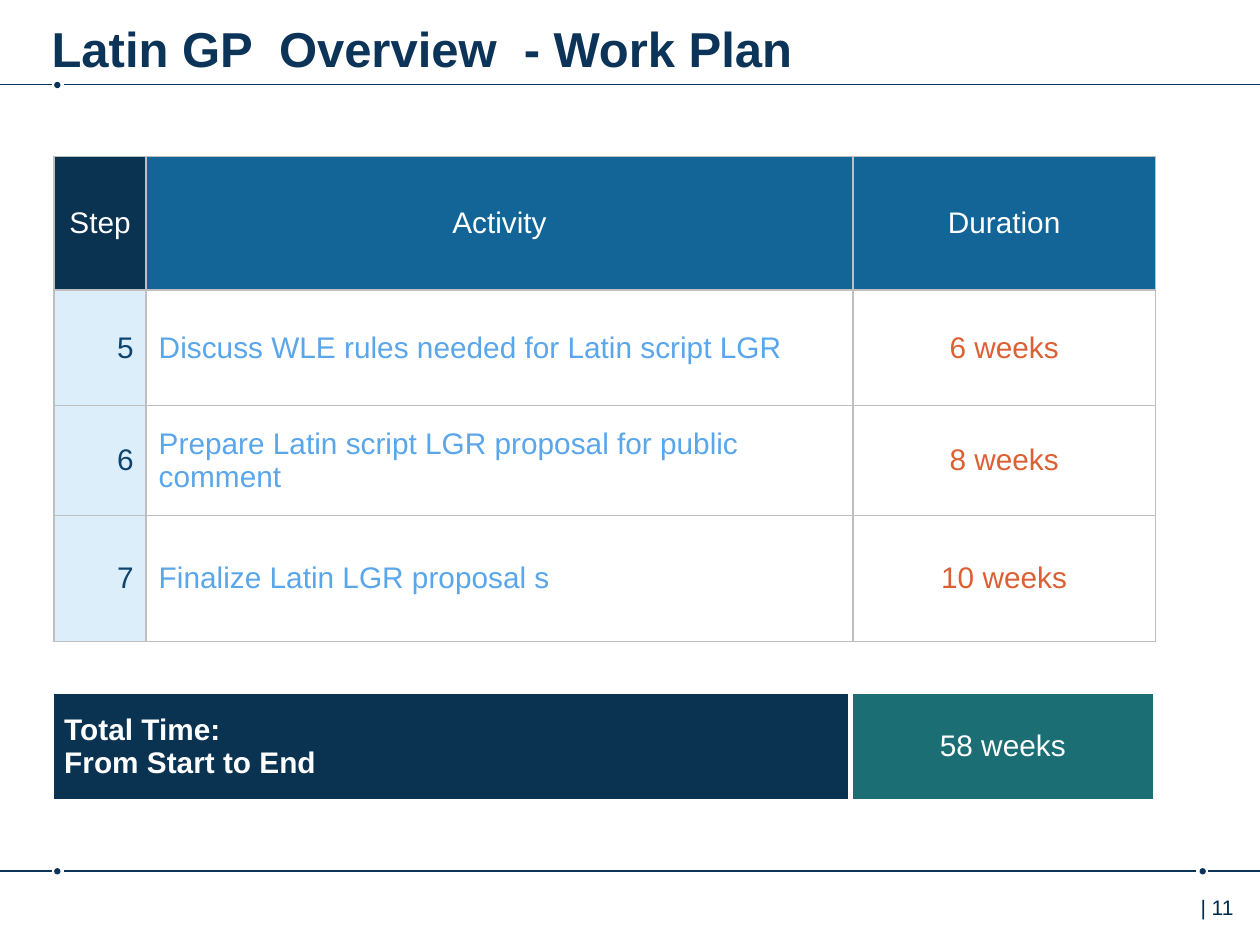
from dataclasses import dataclass
from typing import Optional

from lxml.etree import SubElement
from pptx import Presentation
from pptx.dml.color import RGBColor
from pptx.enum.shapes import MSO_CONNECTOR, MSO_SHAPE
from pptx.enum.text import MSO_ANCHOR as ANCHOR, MSO_AUTO_SIZE, PP_ALIGN as ALIGN
from pptx.oxml.ns import qn
from pptx.util import Pt

PX = 9144  # EMU in one px, 100 px to the inch

NAVY = RGBColor(0x0C, 0x34, 0x58)
DEEP_NAVY = RGBColor(0x0A, 0x32, 0x51)
STEP_TEXT = RGBColor(0x0D, 0x43, 0x6C)
PAGE_TEXT = RGBColor(0x00, 0x2B, 0x49)
BLUE = RGBColor(0x13, 0x65, 0x97)
SKY = RGBColor(0x5A, 0xA6, 0xEA)
PALE = RGBColor(0xCD, 0xE8, 0xF9)
ORANGE = RGBColor(0xDB, 0x60, 0x33)
TEAL = RGBColor(0x1B, 0x6F, 0x74)
GRAY = RGBColor(0xBF, 0xBF, 0xBF)
WHITE = RGBColor(0xFF, 0xFF, 0xFF)


@dataclass
class Cell:
    text: str
    fill: RGBColor
    color: RGBColor = WHITE
    align: ALIGN = ALIGN.CENTER
    bold: bool = False
    opacity: Optional[int] = None


@dataclass
class Rule:
    y: int
    segments: list[tuple[int, int]]
    dots: list[int]


RULES = [
    Rule(67, [(0, 41), (51, 1000)], [43]),
    Rule(691, [(0, 41), (51, 949), (959, 1000)], [43, 952]),
]
HEADER = [Cell("Step", DEEP_NAVY), Cell("Activity", BLUE), Cell("Duration", BLUE)]
STEPS = [
    ("5", "Discuss WLE rules needed for Latin script LGR", "6 weeks"),
    ("6", "Prepare Latin script LGR proposal for public comment", "8 weeks"),
    ("7", "Finalize Latin LGR proposal s", "10 weeks"),
]
TOTAL = [
    Cell("Total Time:\vFrom Start to End", DEEP_NAVY, align=ALIGN.LEFT, bold=True),
    Cell("58 weeks", TEAL),
]


def write(tf, text: str, *, size: int, color: RGBColor, bold: bool = False,
          align: ALIGN = ALIGN.LEFT) -> None:
    tf.word_wrap = True
    tf.text = text
    p = tf.paragraphs[0]
    p.alignment = align
    for r in p.runs:
        r.font.name = "Arial"
        r.font.size = Pt(size)
        r.font.bold = bold
        r.font.color.rgb = color


def place(sp, left: int, top: int, width: int, height: int) -> None:
    sp.left, sp.top, sp.width, sp.height = (v * PX for v in (left, top, width, height))


def draw_rule(shapes, rule: Rule) -> None:
    for x in rule.dots:
        dot = shapes.add_shape(MSO_SHAPE.OVAL, x * PX, (rule.y - 2) * PX, 5 * PX, 5 * PX)
        dot.shadow.inherit = False
        dot.fill.solid()
        dot.fill.fore_color.rgb = NAVY
        dot.line.fill.background()
    for start, end in rule.segments:
        line = shapes.add_connector(MSO_CONNECTOR.STRAIGHT, start * PX, rule.y * PX,
                                    end * PX, rule.y * PX)
        line.line.color.rgb = NAVY
        line.line.width = Pt(1)
        SubElement(line._element.spPr, qn("a:effectLst"))


def style_cell(cell, data: Cell, border: RGBColor, border_pt: int) -> None:
    write(cell.text_frame, data.text, size=17, color=data.color, bold=data.bold,
          align=data.align)
    cell.vertical_anchor = ANCHOR.MIDDLE
    tc_pr = cell._tc.get_or_add_tcPr()
    for side in ("lnL", "lnR", "lnT", "lnB"):
        ln = SubElement(tc_pr, qn(f"a:{side}"), w=str(Pt(border_pt)))
        SubElement(SubElement(ln, qn("a:solidFill")), qn("a:srgbClr"), val=str(border))
    cell.fill.solid()
    cell.fill.fore_color.rgb = data.fill
    if data.opacity is not None:
        color = tc_pr.find(qn("a:solidFill")).find(qn("a:srgbClr"))
        SubElement(color, qn("a:alpha"), val=str(data.opacity * 1000))


def draw_table(shapes, left: int, top: int, widths: list[int], heights: list[int],
               rows: list[list[Cell]], border: RGBColor, border_pt: int) -> None:
    table = shapes.add_table(len(heights), len(widths), left * PX, top * PX,
                             sum(widths) * PX, sum(heights) * PX).table
    table.first_row = table.horz_banding = False
    for column, width in zip(table.columns, widths):
        column.width = width * PX
    for row, height, cells in zip(table.rows, heights, rows):
        row.height = height * PX
        for cell, data in zip(row.cells, cells):
            style_cell(cell, data, border, border_pt)


def step_row(step: str, activity: str, duration: str) -> list[Cell]:
    return [
        Cell(step, PALE, STEP_TEXT, ALIGN.RIGHT, opacity=70),
        Cell(activity, WHITE, SKY, ALIGN.LEFT, opacity=70),
        Cell(duration, WHITE, ORANGE, opacity=70),
    ]


def main() -> None:
    prs = Presentation()
    prs.slide_width, prs.slide_height = 1000 * PX, 750 * PX
    s = prs.slides.add_slide(prs.slide_layouts[5])

    for rule in RULES:
        draw_rule(s.shapes, rule)

    page = s.shapes.add_textbox(0, 0, 0, 0)
    place(page, 943, 705, 73, 40)
    write(page.text_frame, "| 11", size=12, color=PAGE_TEXT)

    title = s.shapes.title
    place(title, 41, 5, 876, 49)
    tf = title.text_frame
    tf.auto_size = MSO_AUTO_SIZE.NONE
    tf.vertical_anchor = ANCHOR.TOP
    tf.margin_left = tf.margin_right = tf.margin_bottom = 0
    tf.margin_top = 10 * PX
    write(tf, "Latin GP  Overview  - Work Plan", size=28, color=NAVY, bold=True)

    draw_table(s.shapes, 43, 124, [73, 561, 240], [106, 92, 87, 100],
               [HEADER] + [step_row(*step) for step in STEPS], GRAY, 1)
    draw_table(s.shapes, 41, 549, [634, 242], [87], [TOTAL], WHITE, 3)

    prs.save("out.pptx")


if __name__ == "__main__":
    main()
